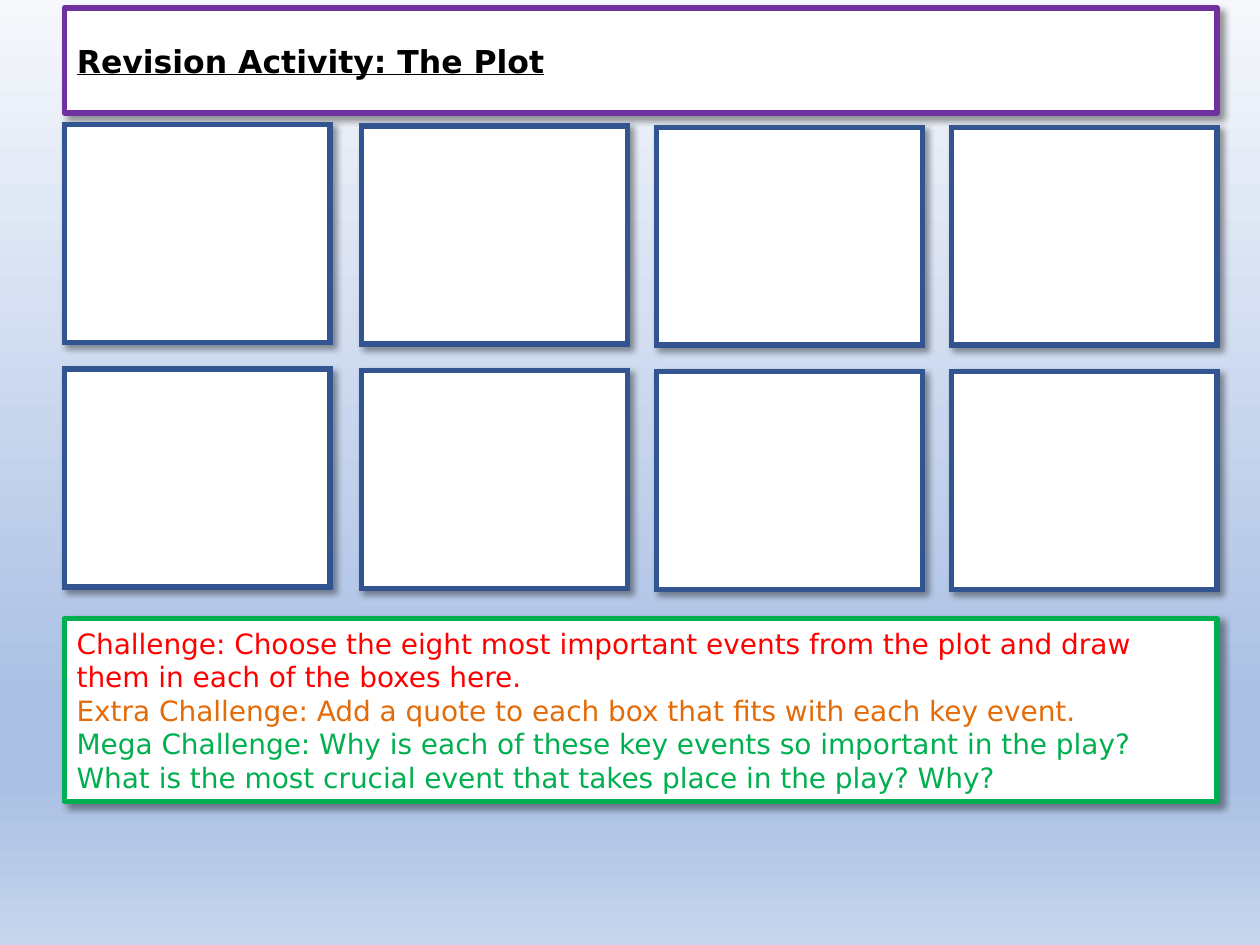
"""Build a revision slide with eight drawing boxes and three challenges."""
from pptx import Presentation
from pptx.dml.color import RGBColor
from pptx.enum.shapes import MSO_SHAPE
from pptx.enum.text import MSO_ANCHOR, MSO_AUTO_SIZE, PP_ALIGN
from pptx.oxml import parse_xml
from pptx.oxml.ns import nsdecls, qn
from pptx.util import Inches, Pt

HUES = {
    "white": "FFFFFF", "black": "000000", "blue": "325491", "purple": "7030A0",
    "green": "00B050", "red": "FF0000", "orange": "E36C0A",
    "pale": "F6F8FC", "deep": "ABC0E4", "mist": "C7D5ED",
}
LEFT, WIDE = 0.51, 9.15
STARTS = [(LEFT, 0.99), (2.87, 1), (5.21, 1.01), (7.55, 1.01)]
ROW_STEP = 1.94
TASKS = [
    ("Challenge: Choose the eight most important events from the plot and draw "
     "them in each of the boxes here.", "red"),
    ("Extra Challenge: Add a quote to each box that fits with each key event.",
     "orange"),
    ("Mega Challenge: Why is each of these key events so important in the play? "
     "What is the most crucial event that takes place in the play? Why?", "green"),
]


class Page:
    font = "DejaVu Sans"
    line = 3

    def __init__(self, slide):
        self.slide = slide

    def shade(self, stops):
        self.slide.background.fill.gradient()
        grad = self.slide.element.find(".//" + qn("a:gradFill"))
        marks = "".join(
            f'<a:gs pos="{pos * 1000}"><a:srgbClr val="{HUES[hue]}"/></a:gs>'
            for pos, hue in stops)
        grad.getparent().replace(grad, parse_xml(
            f'<a:gradFill {nsdecls("a")} rotWithShape="1"><a:gsLst>{marks}</a:gsLst>'
            '<a:lin ang="5400000" scaled="0"/></a:gradFill>'))

    def dress(self, shape, edge):
        shape.fill.solid()
        shape.fill.fore_color.rgb = RGBColor.from_string(HUES["white"])
        shape.line.color.rgb = RGBColor.from_string(HUES[edge])
        shape.line.width = Pt(self.line)
        shape.shadow.inherit = False
        shape.element.spPr.find(qn("a:effectLst")).append(parse_xml(
            f'<a:outerShdw {nsdecls("a")} blurRad="{Pt(4)}" dist="{Pt(3)}" '
            'dir="2700000" algn="tl" rotWithShape="0">'
            f'<a:srgbClr val="{HUES["black"]}"><a:alpha val="40000"/></a:srgbClr>'
            '</a:outerShdw>'))

    def rect(self, left, top, width, height, edge):
        shape = self.slide.shapes.add_shape(
            MSO_SHAPE.RECTANGLE, Inches(left), Inches(top),
            Inches(width), Inches(height))
        self.dress(shape, edge)
        return shape

    def box(self, left, top):
        shape = self.rect(left, top, 2.11, 1.73, "blue")
        shape.element.spPr.find(qn("a:ln")).append(
            parse_xml(f'<a:miter {nsdecls("a")} lim="800000"/>'))

    def label(self, shape, lines, size, strong=False):
        frame = shape.text_frame
        frame.text = "\n".join(text for text, _ in lines)
        frame.word_wrap = True
        frame.auto_size = MSO_AUTO_SIZE.SHAPE_TO_FIT_TEXT
        frame.vertical_anchor = MSO_ANCHOR.MIDDLE
        for para, (_, hue) in zip(frame.paragraphs, lines):
            para.alignment = PP_ALIGN.LEFT
            font = para.runs[0].font
            font.name, font.size = self.font, Pt(size)
            font.bold = font.underline = strong
            font.color.rgb = RGBColor.from_string(HUES[hue])

    def title(self, text):
        shape = self.slide.shapes.title
        shape.left, shape.top = Inches(LEFT), Inches(0.28)
        shape.width, shape.height = Inches(WIDE), Inches(0.4)
        self.dress(shape, "purple")
        self.label(shape, [(text, "black")], 18, strong=True)

    def panel(self, lines):
        shape = self.rect(LEFT, 4.91, WIDE, 1.45, "green")
        self.label(shape, lines, 16)


def main():
    deck = Presentation()
    deck.slide_width, deck.slide_height = Inches(10), Inches(7.5)
    page = Page(deck.slides.add_slide(deck.slide_layouts[5]))
    page.shade([(0, "pale"), (74, "deep"), (83, "deep"), (100, "mist")])
    page.title("Revision Activity: The Plot")
    for row in range(2):
        for left, top in STARTS:
            page.box(left, top + row * ROW_STEP)
    page.panel(TASKS)
    deck.save("out.pptx")


if __name__ == "__main__":
    main()
